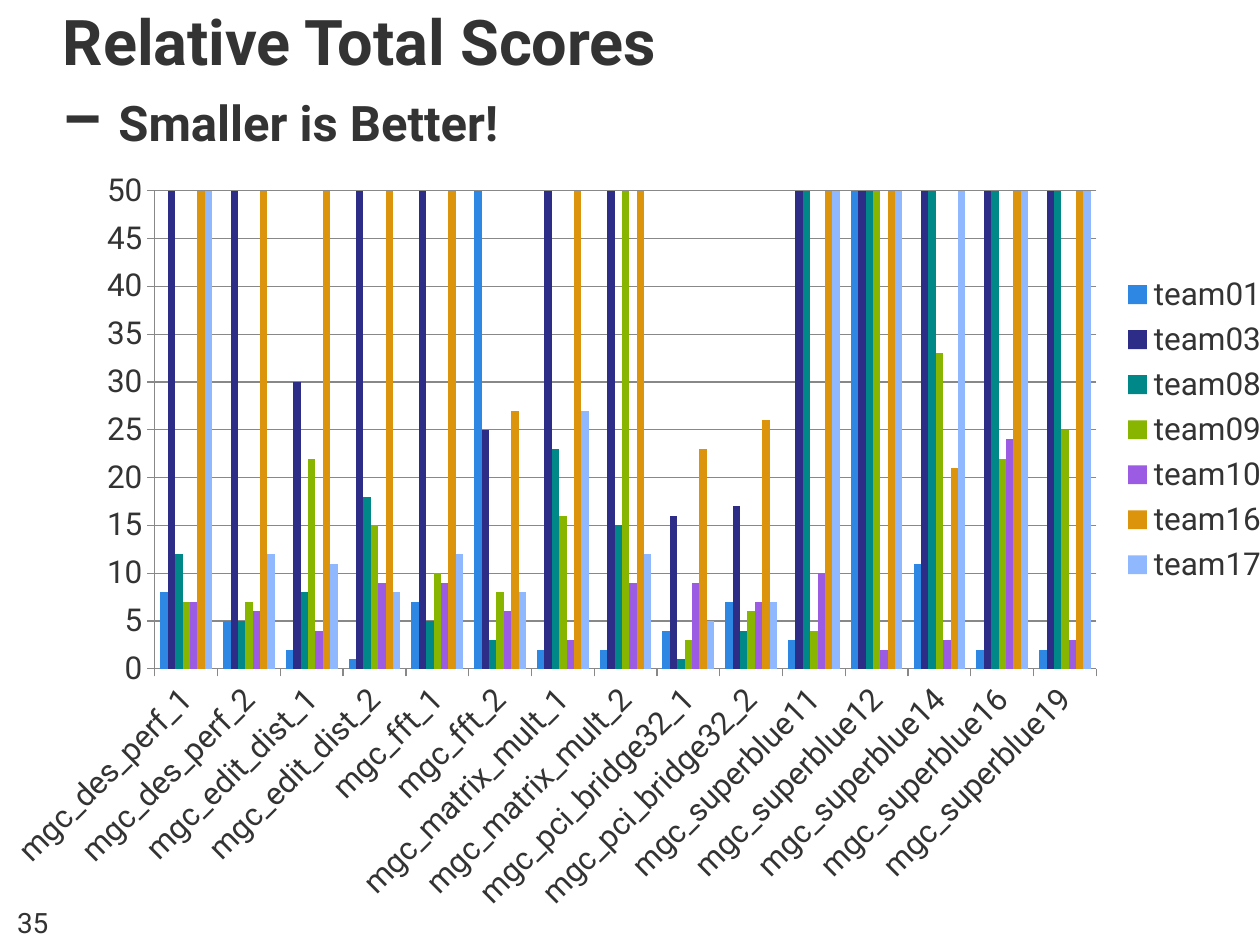
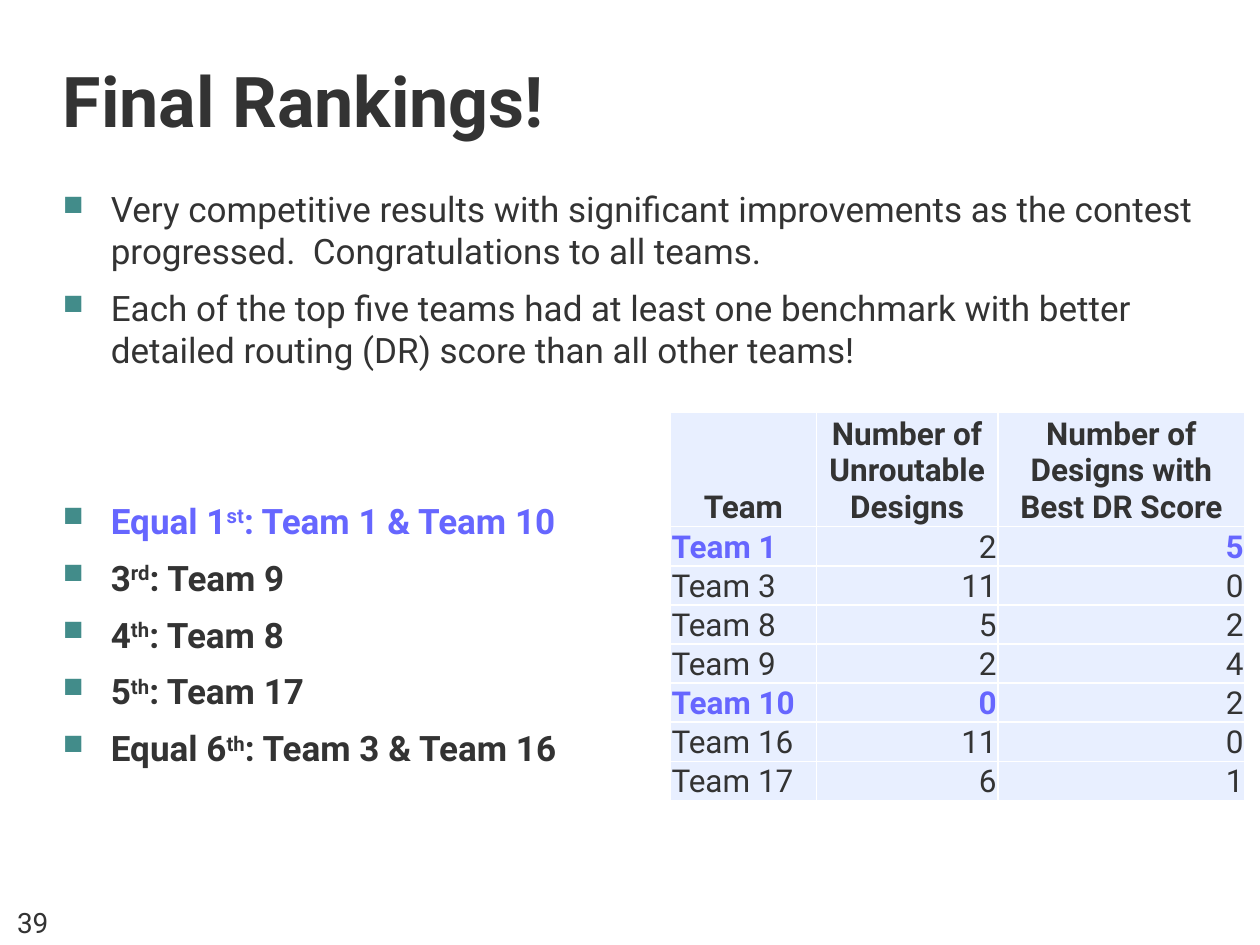
from dataclasses import dataclass
from typing import Any

from lxml.etree import SubElement
from pptx import Presentation
from pptx.chart.data import CategoryChartData
from pptx.dml.color import RGBColor
from pptx.enum.chart import XL_CHART_TYPE, XL_LEGEND_POSITION, XL_TICK_MARK
from pptx.enum.text import MSO_ANCHOR, PP_ALIGN
from pptx.oxml import parse_xml
from pptx.oxml.ns import nsdecls, qn
from pptx.util import Inches, Pt

FONT = "Roboto"
COLORS = {
    "text": "333333",
    "accent": "6666FF",
    "bullet": "428C8A",
    "cell": "E8EFFF",
    "border": "FFFFFF",
    "grid": "888888",
    "team01": "2D87E3",
    "team03": "2D2D88",
    "team08": "008888",
    "team09": "88B500",
    "team10": "9B5BE3",
    "team16": "DD940D",
    "team17": "8FB8FF",
}
TITLE_SIDE, INSET = 0.5, 0.05


@dataclass
class TextRun:
    text: str
    size: int = 20
    bold: bool = False
    color: str = "text"
    superscript: bool = False


@dataclass
class Box:
    left: float
    top: float
    width: float
    height: float

    def lengths(self) -> list[int]:
        return [Inches(v) for v in (self.left, self.top, self.width, self.height)]


@dataclass
class Ranking:
    place: str
    ordinal: str
    teams: str
    color: str = "text"

    def runs(self) -> list[TextRun]:
        parts = ((self.place, False), (self.ordinal, True), (f": {self.teams}", False))
        return [TextRun(text, bold=True, color=self.color, superscript=raised)
                for text, raised in parts]


# Benchmark scores, capped at the top of the value axis
BENCHMARKS = (
    [f"mgc_{design}_{number}" for design in ("des_perf", "edit_dist", "fft", "matrix_mult", "pci_bridge32")
     for number in (1, 2)]
    + [f"mgc_superblue{number}" for number in (11, 12, 14, 16, 19)]
)
SCORES = {
    "team01": (8, 5, 2, 1, 7, 50, 2, 2, 4, 7, 3, 50, 11, 2, 2),
    "team03": (50, 50, 30, 50, 50, 25, 50, 50, 16, 17, 50, 50, 50, 50, 50),
    "team08": (12, 5, 8, 18, 5, 3, 23, 15, 1, 4, 50, 50, 50, 50, 50),
    "team09": (7, 7, 22, 15, 10, 8, 16, 50, 3, 6, 4, 50, 33, 22, 25),
    "team10": (7, 6, 4, 9, 9, 6, 3, 9, 9, 7, 10, 2, 3, 24, 3),
    "team16": (50, 50, 50, 50, 50, 27, 50, 50, 23, 26, 50, 50, 21, 50, 50),
    "team17": (50, 12, 11, 8, 12, 8, 27, 12, 5, 7, 50, 50, 50, 50, 50),
}

# Final results
REMARKS = (
    "Very competitive results with significant improvements as the contest progressed.  "
    "Congratulations to all teams.",
    "Each of the top five teams had at least one benchmark with better detailed routing (DR) "
    "score than all other teams!",
)
RANKINGS = (
    Ranking("Equal 1", "st", "Team 1 & Team 10", "accent"),
    Ranking("3", "rd", "Team 9"),
    Ranking("4", "th", "Team 8"),
    Ranking("5", "th", "Team 17"),
    Ranking("Equal 6", "th", "Team 3 & Team 16"),
)
RESULT_ROWS = (
    ("Team", "Number of Unroutable Designs", "Number of Designs with Best DR Score"),
    ("Team 1", "2", "5"),
    ("Team 3", "11", "0"),
    ("Team 8", "5", "2"),
    ("Team 9", "2", "4"),
    ("Team 10", "0", "2"),
    ("Team 16", "11", "0"),
    ("Team 17", "6", "1"),
)
BEST_CELLS = {(1, 0), (1, 2), (5, 0), (5, 1)}


# Shared helpers
def rgb(name: str) -> RGBColor:
    return RGBColor.from_string(COLORS[name])


def apply_format(target: Any, values: dict[str, Any]) -> None:
    for name, value in values.items():
        setattr(target, name, value)


def format_font(font: Any, size: int, bold: bool = False, color: str = "text") -> None:
    apply_format(font, {"name": FONT, "size": Pt(size), "bold": bold})
    font.color.rgb = rgb(color)


def add_runs(paragraph: Any, runs: list[TextRun]) -> None:
    for item in runs:
        run = paragraph.add_run()
        run.text = item.text
        format_font(run.font, item.size, item.bold, item.color)
        if item.superscript:
            run.font._element.set("baseline", "30000")


def add_text_frame(slide: Any, box: Box, anchor: MSO_ANCHOR, side: float) -> Any:
    frame = slide.shapes.add_textbox(*box.lengths()).text_frame
    apply_format(frame, {
        "word_wrap": True, "vertical_anchor": anchor,
        "margin_left": Inches(side), "margin_right": Inches(side),
        "margin_top": Inches(INSET), "margin_bottom": Inches(INSET),
    })
    return frame


def add_title(slide: Any, top: float, lines: list[list[TextRun]]) -> None:
    frame = add_text_frame(slide, Box(0, top, 10, 1.17), MSO_ANCHOR.BOTTOM, TITLE_SIDE)
    paragraph = frame.paragraphs[0]
    for index, runs in enumerate(lines):
        if index:
            paragraph.add_line_break()
        add_runs(paragraph, runs)


def add_page_number(slide: Any, number: int) -> None:
    frame = add_text_frame(slide, Box(0, 7.25, 0.52, 0.25), MSO_ANCHOR.BOTTOM, 0.1)
    frame.paragraphs[0].alignment = PP_ALIGN.CENTER
    add_runs(frame.paragraphs[0], [TextRun(str(number), size=16)])


def add_bullet(paragraph: Any) -> None:
    properties = paragraph._p.get_or_add_pPr()
    indent = Inches(0.38)
    properties.set("marL", str(indent))
    properties.set("indent", str(-indent))
    color = SubElement(properties, qn("a:buClr"))
    SubElement(color, qn("a:srgbClr"), val=COLORS["bullet"])
    SubElement(properties, qn("a:buSzPct"), val="80000")
    SubElement(properties, qn("a:buChar"), char="■")


# Chart
def layout_xml(left: float, top: float, width: float, height: float, inner: bool) -> Any:
    target = '<c:layoutTarget val="inner"/>' if inner else ""
    return parse_xml(
        f'<c:layout {nsdecls("c")}><c:manualLayout>{target}'
        '<c:xMode val="edge"/><c:yMode val="edge"/>'
        f'<c:x val="{left}"/><c:y val="{top}"/><c:w val="{width}"/><c:h val="{height}"/>'
        "</c:manualLayout></c:layout>"
    )


def place_part(element: Any, layout: Any, index: int) -> None:
    for old_layout in element.findall(qn("c:layout")):
        element.remove(old_layout)
    element.insert(index, layout)


def add_score_chart(slide: Any, box: Box) -> None:
    data = CategoryChartData(number_format="0")
    data.categories = BENCHMARKS
    for team, scores in SCORES.items():
        data.add_series(team, scores)
    chart = slide.shapes.add_chart(XL_CHART_TYPE.COLUMN_CLUSTERED, *box.lengths(), data).chart
    apply_format(chart, {"has_title": False, "has_legend": True})
    format_font(chart.font, 18)

    plot = chart.plots[0]
    apply_format(plot, {"gap_width": 150, "overlap": 0, "vary_by_categories": False})
    for series in plot.series:
        series.format.fill.solid()
        series.format.fill.fore_color.rgb = rgb(series.name)

    # Axes
    apply_format(chart.value_axis, {
        "minimum_scale": 0, "maximum_scale": 50, "major_unit": 5, "has_major_gridlines": True,
    })
    apply_format(chart.value_axis.tick_labels, {"number_format": "0", "number_format_is_linked": False})
    for axis in (chart.category_axis, chart.value_axis):
        axis.major_tick_mark = XL_TICK_MARK.OUTSIDE
        format_font(axis.tick_labels.font, 18)
    for line in (chart.category_axis.format.line, chart.value_axis.format.line,
                 chart.value_axis.major_gridlines.format.line):
        line.color.rgb = rgb("grid")
        line.width = Pt(0.75)
    label_body = chart.category_axis._element.find(qn("c:txPr")).find(qn("a:bodyPr"))
    label_body.set("rot", "-2700000")

    # Legend and plot area positions
    apply_format(chart.legend, {"position": XL_LEGEND_POSITION.RIGHT, "include_in_layout": False})
    format_font(chart.legend.font, 18)
    place_part(chart.legend._element, layout_xml(0.86, 0.14, 0.13, 0.42, False), 1)
    plot_area = plot._element.getparent()
    place_part(plot_area, layout_xml(0.13, 0.04, 0.72, 0.62, True), 0)


# Table
def set_cell_borders(cell: Any) -> None:
    properties = cell._tc.get_or_add_tcPr()
    for side in ("lnL", "lnR", "lnT", "lnB"):
        line = SubElement(properties, qn(f"a:{side}"), w=str(Pt(1)))
        fill = SubElement(line, qn("a:solidFill"))
        SubElement(fill, qn("a:srgbClr"), val=COLORS["border"])


def add_result_table(slide: Any, box: Box) -> None:
    widths = (1.16, 1.44, 1.96)
    table = slide.shapes.add_table(len(RESULT_ROWS), len(widths), *box.lengths()).table
    apply_format(table, {"first_row": False, "horz_banding": False})
    for column, width in zip(table.columns, widths):
        column.width = Inches(width)
    for row_index, values in enumerate(RESULT_ROWS):
        header = row_index == 0
        table.rows[row_index].height = Inches(0.88 if header else 0.3)
        for column_index, value in enumerate(values):
            cell = table.cell(row_index, column_index)
            apply_format(cell, {
                "vertical_anchor": MSO_ANCHOR.BOTTOM, "margin_left": Inches(0.01),
                "margin_right": Inches(0.01), "margin_top": Inches(0.01), "margin_bottom": 0,
            })
            set_cell_borders(cell)
            cell.fill.solid()
            cell.fill.fore_color.rgb = rgb("cell")
            best = (row_index, column_index) in BEST_CELLS
            paragraph = cell.text_frame.paragraphs[0]
            body_alignment = PP_ALIGN.RIGHT if column_index else PP_ALIGN.LEFT
            paragraph.alignment = PP_ALIGN.CENTER if header else body_alignment
            add_runs(paragraph, [TextRun(value, 18, header or best, "accent" if best else "text")])


# Slides
def build_scores_slide(slide: Any) -> None:
    add_page_number(slide, 35)
    add_title(slide, 0.1, [
        [TextRun("Relative Total Scores", 36, True)],
        [TextRun("– ", 36, True), TextRun("Smaller is Better!", 28, True)],
    ])
    add_score_chart(slide, Box(-0.12, 1.27, 10.38, 6.12))


def build_rankings_slide(slide: Any) -> None:
    add_title(slide, 0, [[TextRun("Final Rankings!", 40, True)]])
    frame = add_text_frame(slide, Box(0, 1.44, 10, 5.55), MSO_ANCHOR.TOP, TITLE_SIDE)
    bullets = [[TextRun(remark)] for remark in REMARKS] + [ranking.runs() for ranking in RANKINGS]
    for index, runs in enumerate(bullets):
        paragraph = frame.add_paragraph() if index else frame.paragraphs[0]
        if index:
            paragraph.space_before = Pt(73.5 if index == len(REMARKS) else 8.5)
        add_bullet(paragraph)
        add_runs(paragraph, runs)
    add_page_number(slide, 39)
    add_result_table(slide, Box(5.32, 3.27, 4.56, 2.98))


def main() -> None:
    presentation = Presentation()
    apply_format(presentation, {"slide_width": Inches(10), "slide_height": Inches(7.5)})
    for build in (build_scores_slide, build_rankings_slide):
        build(presentation.slides.add_slide(presentation.slide_layouts[6]))
    presentation.save("out.pptx")


if __name__ == "__main__":
    main()
